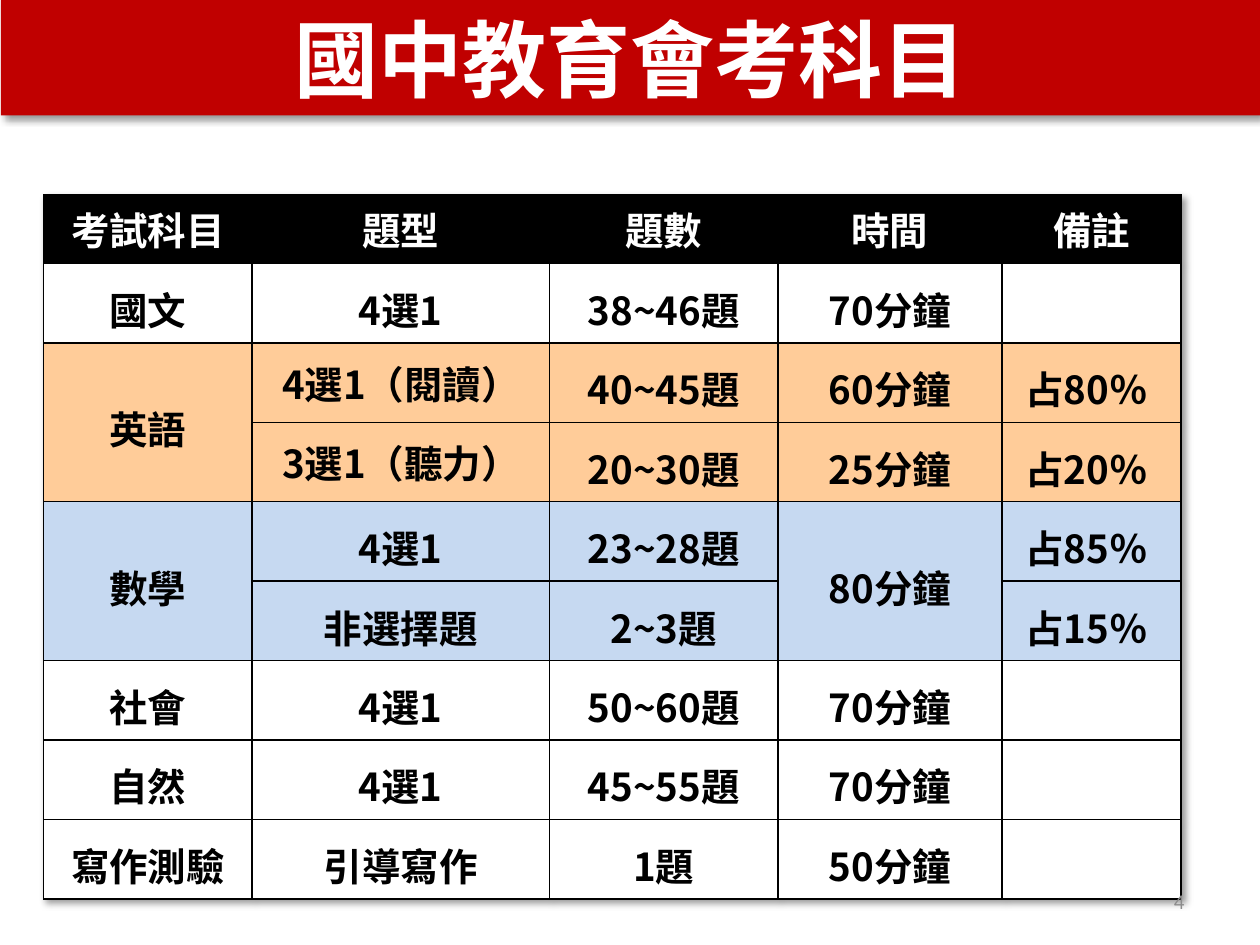
from lxml import etree
from pptx import Presentation
from pptx.dml.color import RGBColor
from pptx.enum.text import MSO_ANCHOR, PP_ALIGN
from pptx.oxml.ns import qn
from pptx.util import Pt

LEFT, CENTER, RIGHT = PP_ALIGN.LEFT, PP_ALIGN.CENTER, PP_ALIGN.RIGHT
MIDDLE = MSO_ANCHOR.MIDDLE

THEME = {
    "heading_font": "Noto Sans CJK SC", "number_font": "Calibri",
    "title_size": 48, "table_size": 22, "number_size": 12,
    "banner": "C00000", "light": "FFFFFF", "dark": "000000", "number": "8C8C8C",
    "header": "000000", "plain": "FFFFFF", "english": "FFCC99", "math": "C6D9F1",
}

TITLE = "國中教育會考科目"
PAGE_NUMBER = "4"
ROWS = [
    ("header", 34, ["考試科目", "題型", "題數", "時間", "備註"]),
    ("plain", 42, ["國文", "4選1", "38~46題", "70分鐘", ""]),
    ("english", 37.5, ["英語", "4選1（閱讀）", "40~45題", "60分鐘", "占80％"]),
    ("english", 42.5, ["", "3選1（聽力）", "20~30題", "25分鐘", "占20％"]),
    ("math", 44, ["數學", "4選1", "23~28題", "80分鐘", "占85％"]),
    ("math", 44, ["", "非選擇題", "2~3題", "", "占15％"]),
    ("plain", 39, ["社會", "4選1", "50~60題", "70分鐘", ""]),
    ("plain", 34, ["自然", "4選1", "45~55題", "70分鐘", ""]),
    ("plain", 34, ["寫作測驗", "引導寫作", "1題", "50分鐘", ""]),
]
COLUMN_WIDTHS = [119, 170, 130.5, 128, 102.5]
MERGES = [(2, 0), (4, 0), (4, 3)]
TYPE_COLUMN, REMARK_COLUMN = 1, 4
REMARK_INDENT = 12
TIGHT_MARGIN = 1.5


def color(key):
    return RGBColor.from_string(THEME[key])


def add_color(parent, key):
    return etree.SubElement(parent, qn("a:srgbClr"), val=THEME[key])


def write(paragraph, text, size, ink, alignment, font="heading_font", bold=True):
    paragraph.text = text
    paragraph.alignment = alignment
    paragraph.font.size = Pt(THEME[size])
    paragraph.font.bold = bold
    paragraph.font.color.rgb = color(ink)
    paragraph.font.name = THEME[font]
    properties = paragraph._p.pPr.find(qn("a:defRPr"))
    etree.SubElement(properties, qn("a:ea"), typeface=THEME[font])


def shadow_effect():
    effects = etree.Element(qn("a:effectLst"))
    shadow = etree.SubElement(effects, qn("a:outerShdw"), blurRad=str(Pt(4)),
                              dist=str(Pt(3)), dir="2700000", algn="tl", rotWithShape="0")
    etree.SubElement(add_color(shadow, "dark"), qn("a:alpha"), val="40000")
    return effects


def add_borders(cell):
    properties = cell._tc.get_or_add_tcPr()
    for index, side in enumerate(("a:lnL", "a:lnR", "a:lnT", "a:lnB")):
        line = etree.Element(qn(side), w=str(Pt(1)))
        add_color(etree.SubElement(line, qn("a:solidFill")), "dark")
        properties.insert(index, line)


def add_title(slide):
    title = slide.shapes.title
    title.left, title.top, title.width, title.height = Pt(0.5), 0, Pt(719.5), Pt(66)
    title.fill.solid()
    title.fill.fore_color.rgb = color("banner")
    title._element.spPr.append(shadow_effect())
    title.text_frame.vertical_anchor = MIDDLE
    write(title.text_frame.paragraphs[0], TITLE, "title_size", "light", CENTER)


def fill_cell(cell, text, band, column):
    cell.fill.solid()
    cell.fill.fore_color.rgb = color(band)
    cell.vertical_anchor = MIDDLE
    add_borders(cell)
    if not text:
        return
    header = band == "header"
    remark = column == REMARK_COLUMN and not header
    reading_type = column == TYPE_COLUMN and band == "english"
    paragraph = cell.text_frame.paragraphs[0]
    write(paragraph, text, "table_size", "light" if header else "dark",
          LEFT if remark else CENTER)
    if not header and not reading_type:
        paragraph.line_spacing = 1.2
    if remark:
        paragraph._p.pPr.set("marL", str(Pt(REMARK_INDENT)))
        paragraph._p.pPr.set("indent", "0")
    if remark or reading_type:
        cell.margin_left = cell.margin_right = Pt(TIGHT_MARGIN)
        cell.margin_top = cell.margin_bottom = Pt(TIGHT_MARGIN)


def add_subject_table(slide):
    frame = slide.shapes.add_table(len(ROWS), len(COLUMN_WIDTHS), Pt(25), Pt(111.5),
                                   Pt(sum(COLUMN_WIDTHS)), Pt(361.5))
    table = frame.table
    table.horz_banding = False
    table._tbl.tblPr.insert(0, shadow_effect())
    for column, width in zip(table.columns, COLUMN_WIDTHS):
        column.width = Pt(width)
    for row, (band, height, texts) in enumerate(ROWS):
        table.rows[row].height = Pt(height)
        for column, text in enumerate(texts):
            fill_cell(table.cell(row, column), text, band, column)
    for row, column in MERGES:
        table.cell(row, column).merge(table.cell(row + 1, column))


def add_page_number(slide):
    box = slide.shapes.add_textbox(Pt(516), Pt(500.5), Pt(168), Pt(29))
    box.text_frame.word_wrap = True
    box.text_frame.vertical_anchor = MIDDLE
    write(box.text_frame.paragraphs[0], PAGE_NUMBER, "number_size", "number", RIGHT,
          "number_font", False)


def main():
    presentation = Presentation()
    presentation.slide_width, presentation.slide_height = Pt(720), Pt(540)
    slide = presentation.slides.add_slide(presentation.slide_layouts[5])
    add_title(slide)
    add_subject_table(slide)
    add_page_number(slide)
    presentation.save("out.pptx")


if __name__ == "__main__":
    main()
